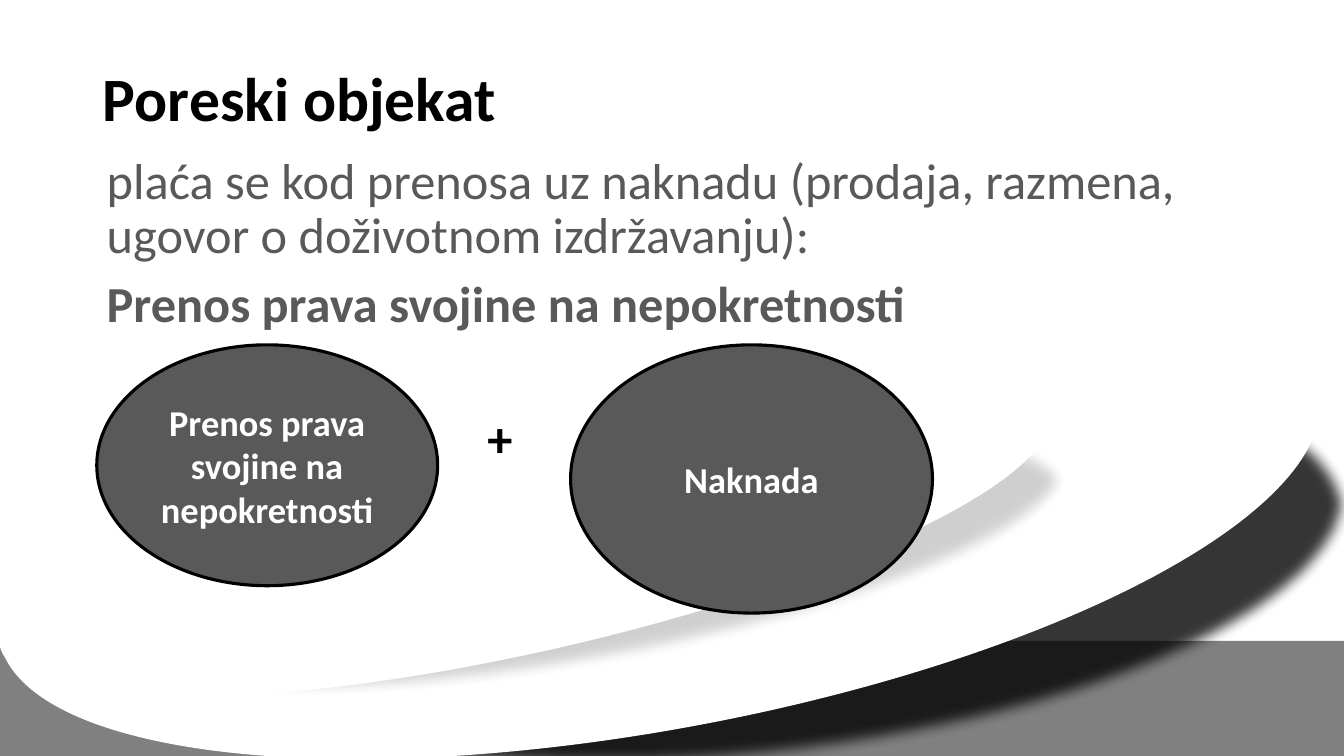
from lxml import etree
from pptx import Presentation
from pptx.dml.color import RGBColor
from pptx.enum.shapes import MSO_SHAPE as SHAPE
from pptx.enum.text import MSO_ANCHOR as ANCHOR, PP_ALIGN as ALIGN
from pptx.oxml.ns import qn
from pptx.util import Cm, Pt

BLACK = RGBColor(0x00, 0x00, 0x00)
WHITE = RGBColor(0xFF, 0xFF, 0xFF)
GRAY = RGBColor(0x59, 0x59, 0x59)
BAND_GRAY = RGBColor(0x80, 0x80, 0x80)


def add_text(tf, *lines, size, color, bold=(True,), align=ALIGN.LEFT,
             anchor=ANCHOR.TOP, spacing=None, before=0):
    """Fill a text frame, one paragraph per line, with bold given per line."""
    tf.word_wrap = True
    tf.vertical_anchor = anchor
    for i, (line, is_bold) in enumerate(zip(lines, bold)):
        p = tf.add_paragraph() if i else tf.paragraphs[0]
        p.alignment = align
        p.line_spacing = spacing
        p.space_before = Pt(before if i else 0)
        r = p.add_run()
        r.text = line
        r.font.name = "Calibri"
        r.font.size = Pt(size)
        r.font.bold = is_bold
        r.font.color.rgb = color


def add_filled(kind, x, y, w, h, color):
    sp = slide.shapes.add_shape(kind, Cm(x), Cm(y), Cm(w), Cm(h))
    sp.shadow.inherit = False
    sp.fill.solid()
    sp.fill.fore_color.rgb = color
    sp.line.fill.background()
    return sp


prs = Presentation()
prs.slide_width, prs.slide_height = Cm(33.87), Cm(19.05)
slide = prs.slides.add_slide(prs.slide_layouts[5])

# Background band and swooshes: each white ellipse lies over a soft dark one
add_filled(SHAPE.RECTANGLE, 0, 16.15, 33.87, 2.9, BAND_GRAY)
swooshes = [  # centre x, centre y, width, height, rotation, color, opacity %
    (19.15, 14.11, 30.1, 10.3, -6, BLACK, 79),
    (16.61, 13.02, 33.83, 10.69, -10.6, WHITE, 100),
    (15.12, 14.16, 24.2, 5.4, -10.4, BLACK, 19),
    (13.24, 13.3, 27.15, 6.27, -12.7, WHITE, 100),
]
for cx, cy, w, h, rotation, color, opacity in swooshes:
    sp = add_filled(SHAPE.OVAL, cx - w / 2, cy - h / 2, w, h, color)
    sp.rotation = rotation
    if opacity < 100:
        spPr = sp._element.spPr
        clr = spPr.find(qn("a:solidFill"))[0]
        etree.SubElement(clr, qn("a:alpha"), val=str(opacity * 1000))
        effects = spPr.find(qn("a:effectLst"))
        etree.SubElement(effects, qn("a:softEdge"), rad=str(Pt(10)))

title = slide.shapes.title
title.left, title.top, title.width, title.height = Cm(2.34), Cm(1.6), Cm(29.2), Cm(2.6)
add_text(title.text_frame, "Poreski objekat", size=44, color=BLACK, spacing=0.9)

body = slide.shapes.add_textbox(Cm(2.44), Cm(3.8), Cm(29.2), Cm(4.8))
add_text(body.text_frame,
         "plaća se kod prenosa uz naknadu (prodaja, razmena, ugovor o doživotnom izdržavanju):",
         "Prenos prava svojine na nepokretnosti",
         size=36, color=GRAY, bold=(False, True), spacing=0.9, before=10)

plus = slide.shapes.add_textbox(Cm(11.6), Cm(10.13), Cm(2), Cm(1.8))
add_text(plus.text_frame, "+", size=36, color=BLACK, align=ALIGN.CENTER)

for x, w, h, text in [
    (2.44, 8.59, 6.07, "Prenos prava svojine na nepokretnosti"),
    (14.38, 9.12, 6.76, "Naknada"),
]:
    sp = add_filled(SHAPE.OVAL, x, 8.69, w, h, GRAY)
    sp.line.color.rgb = BLACK
    sp.line.width = Pt(2.25)
    add_text(sp.text_frame, text, size=26, color=WHITE,
             align=ALIGN.CENTER, anchor=ANCHOR.MIDDLE)

prs.save("out.pptx")
